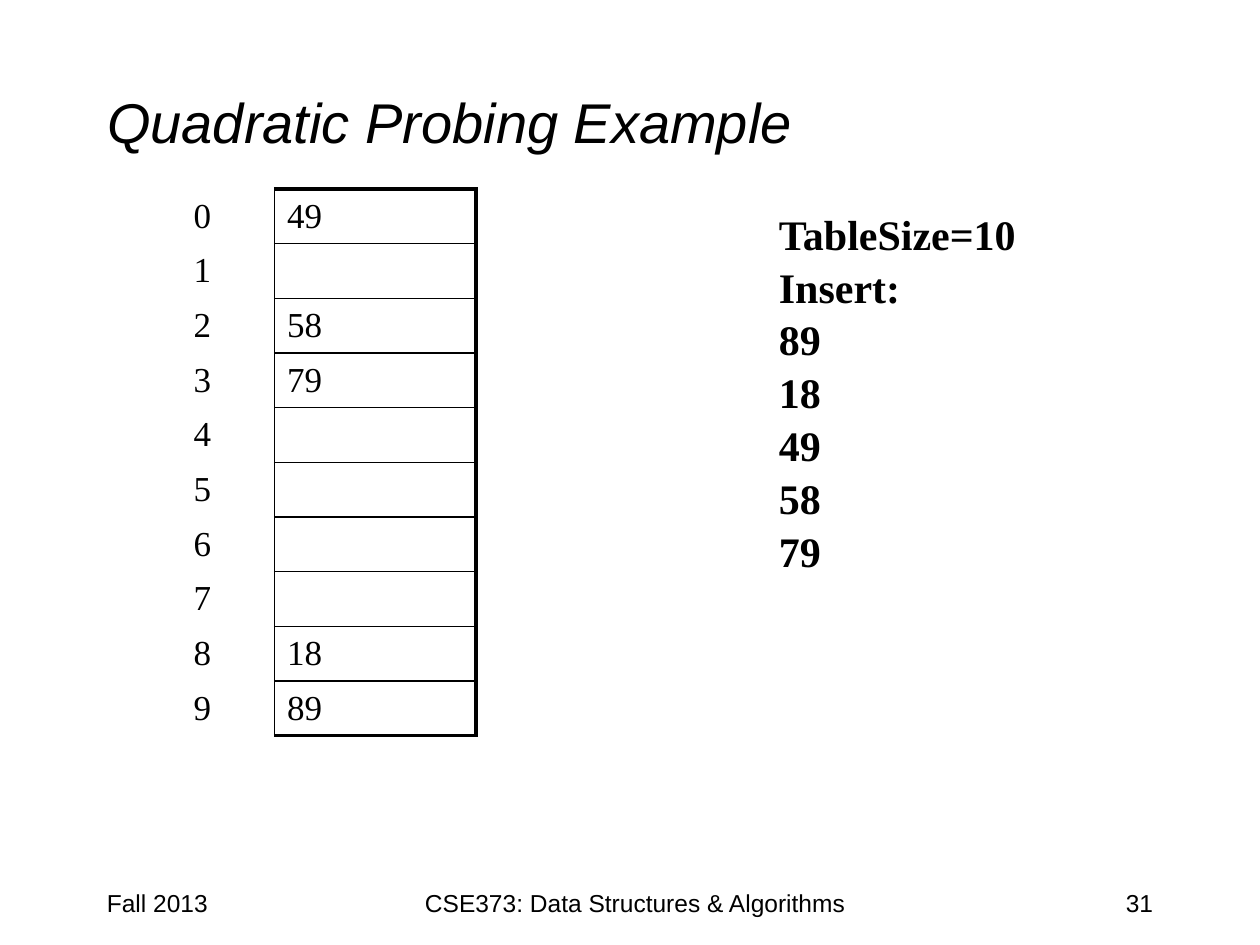
from lxml.etree import SubElement
from pptx import Presentation
from pptx.dml.color import RGBColor
from pptx.enum.text import MSO_ANCHOR, PP_ALIGN
from pptx.oxml.ns import qn
from pptx.util import Inches, Pt

COLORS = {"ink": "000000"}
FORMATS = {
    "title": {"name": "Arial", "size": Pt(32), "italic": True},
    "footer": {"name": "Arial", "size": Pt(14)},
    "cell": {"name": "Times New Roman", "size": Pt(20), "bold": False},
    "inserts": {"name": "Times New Roman", "size": Pt(24), "bold": True},
}
COLUMNS, ROWS = 120, 90
THIN, THICK = 1, 2.25


class SlideBuilder:
    """Holds the current slide and its grid, and adds styled elements."""

    def __init__(self, prs):
        self.s = prs.slides.add_slide(prs.slide_layouts[5])
        self.unit_x = prs.slide_width / COLUMNS
        self.unit_y = prs.slide_height / ROWS

    def box(self, x, y, w, h):
        """Turn grid columns and rows into slide lengths."""
        return (round(x * self.unit_x), round(y * self.unit_y),
                round(w * self.unit_x), round(h * self.unit_y))

    def fill_text(self, tf, lines, style, align=PP_ALIGN.LEFT, spacing=1.0):
        for i, line in enumerate(lines):
            p = tf.add_paragraph() if i else tf.paragraphs[0]
            p.alignment, p.line_spacing = align, spacing
            r = p.add_run()
            r.text = line
            for key, value in FORMATS[style].items():
                setattr(r.font, key, value)
            r.font.color.rgb = RGBColor.from_string(COLORS["ink"])

    def title(self, text, *grid):
        sp = self.s.shapes.title
        sp.left, sp.top, sp.width, sp.height = self.box(*grid)
        sp.text_frame.vertical_anchor = MSO_ANCHOR.MIDDLE
        self.fill_text(sp.text_frame, [text], "title")

    def text(self, lines, style, *grid, **layout):
        tf = self.s.shapes.add_textbox(*self.box(*grid)).text_frame
        tf.word_wrap = True
        self.fill_text(tf, lines, style, **layout)

    def borders(self, cell, widths):
        """Draw the left, right, top and bottom lines; None hides one."""
        tc_pr = cell._tc.get_or_add_tcPr()
        for side, width in zip("LRTB", widths):
            ln = SubElement(tc_pr, qn(f"a:ln{side}"))
            if width is None:
                SubElement(ln, qn("a:noFill"))
            else:
                ln.set("w", str(Pt(width)))
                fill = SubElement(ln, qn("a:solidFill"))
                SubElement(fill, qn("a:srgbClr"), val=COLORS["ink"])

    def hash_table(self, slots, x, y, col_widths, row_height):
        size = len(slots)
        table = self.s.shapes.add_table(
            size, 2, *self.box(x, y, sum(col_widths), size * row_height)).table
        table.first_row = table.horz_banding = False
        for column, width in zip(table.columns, col_widths):
            column.width = round(width * self.unit_x)
        for i, key in enumerate(slots):
            table.rows[i].height = round(row_height * self.unit_y)
            edges = (THIN, THICK, THIN if i else THICK,
                     THIN if i < size - 1 else THICK)
            for j, (text, widths) in enumerate(
                    [(str(i), (None, THIN, None, None)), (key, edges)]):
                cell = table.cell(i, j)
                self.borders(cell, widths)
                cell.fill.background()
                cell.vertical_anchor = MSO_ANCHOR.MIDDLE
                self.fill_text(cell.text_frame, [text], "cell")


def main():
    prs = Presentation()
    prs.slide_width, prs.slide_height = Inches(10), Inches(7.5)
    slide = SlideBuilder(prs)
    slide.title("Quadratic Probing Example", 9, 4, 102, 15)
    for text, x, w, align in [
        ("Fall 2013", 9, 25, PP_ALIGN.LEFT),
        ("CSE373: Data Structures & Algorithms", 38, 45, PP_ALIGN.CENTER),
        ("31", 86, 25, PP_ALIGN.RIGHT),
    ]:
        slide.text([text], "footer", x, 84, w, 6, align=align)
    slide.hash_table(["49", "", "58", "79", "", "", "", "", "18", "89"],
                     17.25, 18, (8.9, 19.2), 5)
    slide.text(["TableSize=10", "Insert:", "89", "18", "49", "58", "79"],
               "inserts", 73, 19, 29, 35, spacing=1.05)
    prs.save("out.pptx")


if __name__ == "__main__":
    main()
